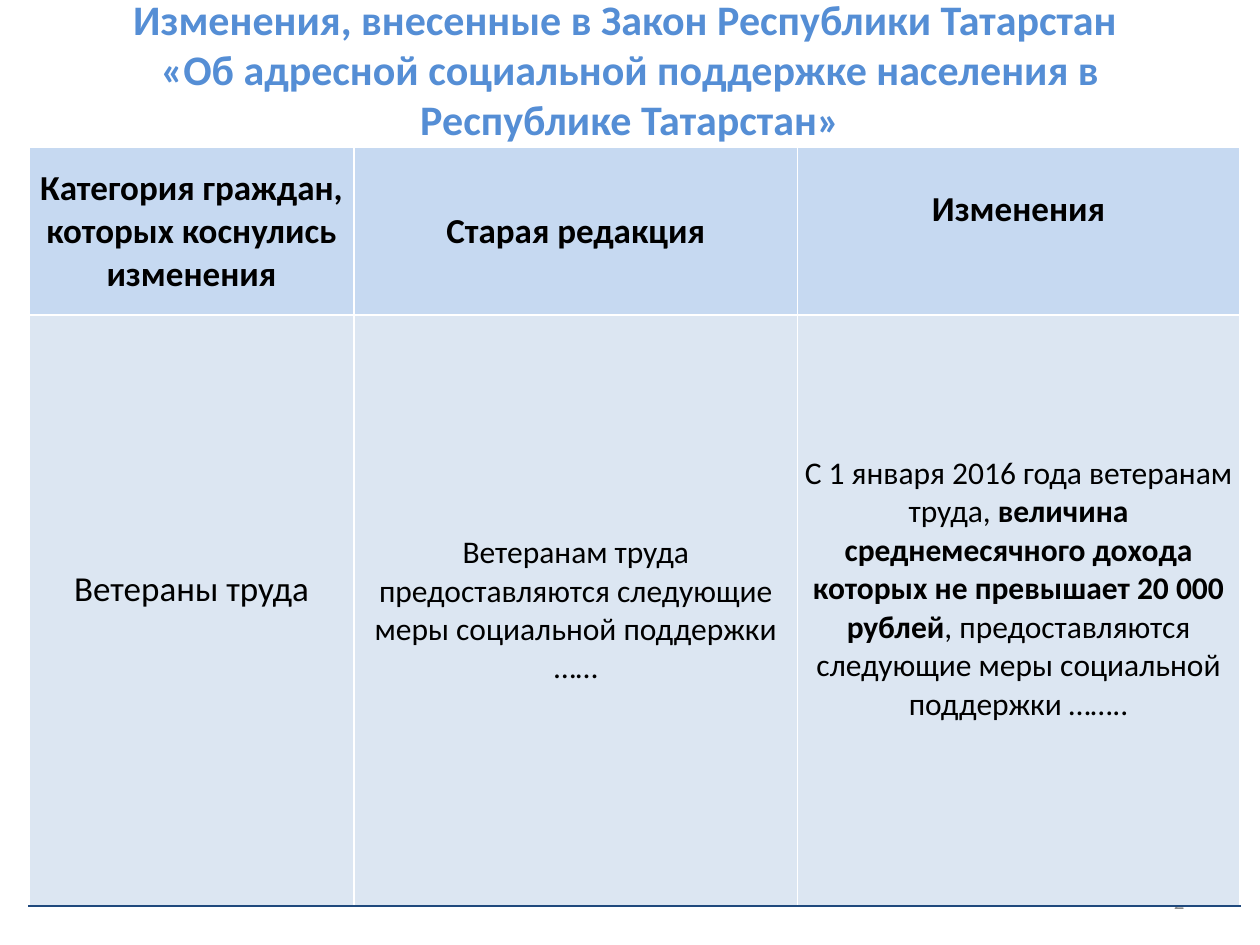
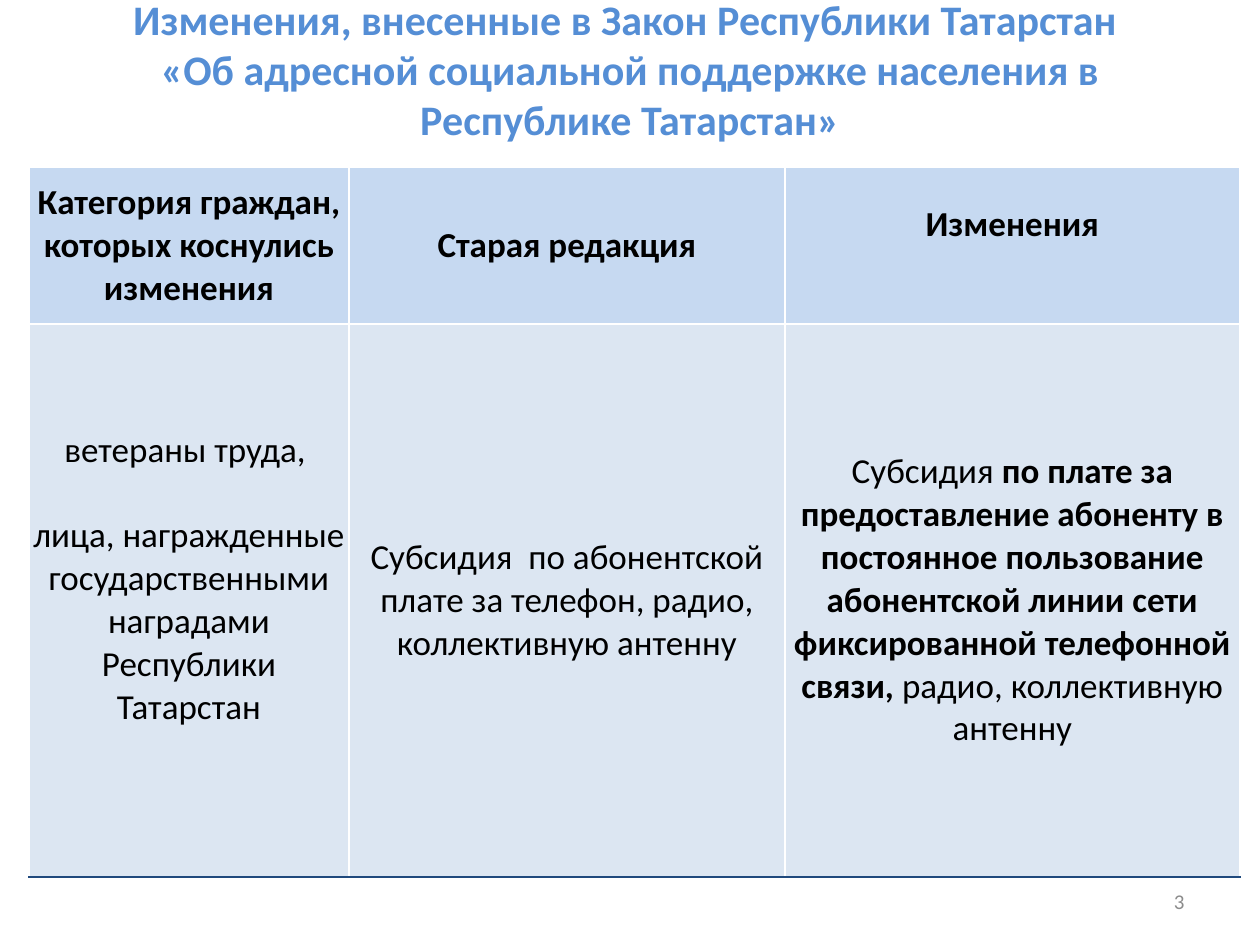
from lxml import etree
from pptx import Presentation
from pptx.dml.color import RGBColor
from pptx.enum.text import MSO_ANCHOR, PP_ALIGN
from pptx.oxml.ns import qn
from pptx.util import Inches, Pt

MIDDLE = MSO_ANCHOR.MIDDLE
CENTER, RIGHT = PP_ALIGN.CENTER, PP_ALIGN.RIGHT

FONT = "Calibri"
TITLE_BLUE, NUMBER_GREY, BLACK = "558ED5", "8C8C8C", "000000"
HEADER_FILL, BODY_FILL = "C6D9F1", "DCE6F2"
WHITE, NAVY = "FFFFFF", "1F497D"

TITLE_LINES = ["Изменения, внесенные в Закон Республики Татарстан ",
               "«Об адресной социальной поддержке населения в Республике Татарстан»"]
HEADERS = ["Категория граждан, которых коснулись изменения",
           "Старая редакция", "Изменения"]
TABLE_LEFT = 0.23
SIDE_MARGIN = 0.02
LIFT = 0.34  # bottom margin of one text line, raises centred text
LINE_GAP = 24.4


def color(hex_code):
    return RGBColor.from_string(hex_code)


def add_run(p, text, size, hex_code, bold=False):
    r = p.add_run()
    r.text = text
    r.font.name = FONT
    r.font.size = Pt(size)
    r.font.bold = bold
    r.font.color.rgb = color(hex_code)


def add_text_box(slide, left, top, width, height, align):
    """Add a wrapped, vertically centred box and return its first paragraph."""
    box = slide.shapes.add_textbox(Inches(left), Inches(top),
                                   Inches(width), Inches(height))
    tf = box.text_frame
    tf.word_wrap = True
    tf.vertical_anchor = MIDDLE
    p = tf.paragraphs[0]
    p.alignment = align
    return p


def add_title(slide):
    p = add_text_box(slide, 0.5, 0, 9, 1.09, CENTER)
    for i, line in enumerate(TITLE_LINES):
        if i:
            p.add_line_break()
        add_run(p, line, 24, TITLE_BLUE, True)


def add_page_number(slide, number):
    p = add_text_box(slide, 7.17, 6.95, 2.33, 0.4, RIGHT)
    add_run(p, str(number), 12, NUMBER_GREY)


def set_borders(cell, bottom):
    """Draw 1 pt white borders, with the given colour at the bottom."""
    tc_pr = cell._tc.get_or_add_tcPr()
    sides = {"lnL": WHITE, "lnR": WHITE, "lnT": WHITE, "lnB": bottom}
    for i, (side, hex_code) in enumerate(sides.items()):
        ln = etree.Element(qn("a:" + side), w=str(Pt(1)))
        fill = etree.SubElement(ln, qn("a:solidFill"))
        etree.SubElement(fill, qn("a:srgbClr"), val=hex_code)
        tc_pr.insert(i, ln)


def fill_cell(cell, paragraphs, fill, bottom, size=20, lifted=False):
    """Write paragraphs, each a list of (text, bold) runs, into a cell."""
    cell.fill.solid()
    cell.fill.fore_color.rgb = color(fill)
    cell.vertical_anchor = MIDDLE
    cell.margin_left = cell.margin_right = Inches(SIDE_MARGIN)
    cell.margin_top = 0
    cell.margin_bottom = Inches(LIFT if lifted else 0)
    set_borders(cell, bottom)
    tf = cell.text_frame
    for i, runs in enumerate(paragraphs):
        p = tf.add_paragraph() if i else tf.paragraphs[0]
        p.alignment = CENTER
        if i:
            p.space_before = Pt(LINE_GAP)
        for text, bold in runs:
            add_run(p, text, size, BLACK, bold)


def add_changes_table(slide, top, col_widths, row_heights, body):
    frame = slide.shapes.add_table(
        2, len(HEADERS), Inches(TABLE_LEFT), Inches(top),
        Inches(sum(col_widths)), Inches(sum(row_heights)))
    table = frame.table
    for column, width in zip(table.columns, col_widths):
        column.width = Inches(width)
    for row, height in zip(table.rows, row_heights):
        row.height = Inches(height)
    for col, header in enumerate(HEADERS):
        fill_cell(table.cell(0, col), [[(header, True)]], HEADER_FILL, WHITE,
                  lifted=header == HEADERS[-1])
    for col, (paragraphs, size, lifted) in enumerate(body):
        fill_cell(table.cell(1, col), paragraphs, BODY_FILL, NAVY, size, lifted)


# Body cells: paragraphs, text size, lifted above the middle
VETERANS = [
    ([[("Ветераны труда", False)]], 20, True),
    ([[("Ветеранам труда предоставляются следующие меры социальной "
        "поддержки ……", False)]], 18, False),
    ([[("С 1 января 2016 года ветеранам труда, ", False),
       ("величина среднемесячного дохода которых не превышает "
        "20 000 рублей", True),
       (", предоставляются следующие меры социальной поддержки ……..",
        False)]], 18, True),
]
SUBSIDY = [
    ([[("ветераны труда, ", False)],
      [("лица, награжденные государственными наградами Республики Татарстан",
        False)]], 20, True),
    ([[("Субсидия  по абонентской плате за телефон, радио, "
        "коллективную антенну", False)]], 20, False),
    ([[("Субсидия ", False),
       ("по плате за предоставление абоненту в постоянное пользование "
        "абонентской линии сети фиксированной телефонной связи, ", True),
       ("радио, коллективную антенну", False)]], 20, False),
]
# Page number, table top, column widths, row heights, body cells
PAGES = [
    (2, 1.17, [2.58, 3.52, 3.51], [1.33, 4.69], VETERANS),
    (3, 1.33, [2.54, 3.46, 3.61], [1.24, 4.39], SUBSIDY),
]


def main():
    prs = Presentation()
    prs.slide_width, prs.slide_height = Inches(10), Inches(7.5)
    for number, top, col_widths, row_heights, body in PAGES:
        slide = prs.slides.add_slide(prs.slide_layouts[6])
        add_title(slide)
        add_page_number(slide, number)
        add_changes_table(slide, top, col_widths, row_heights, body)
    prs.save("out.pptx")


if __name__ == "__main__":
    main()
